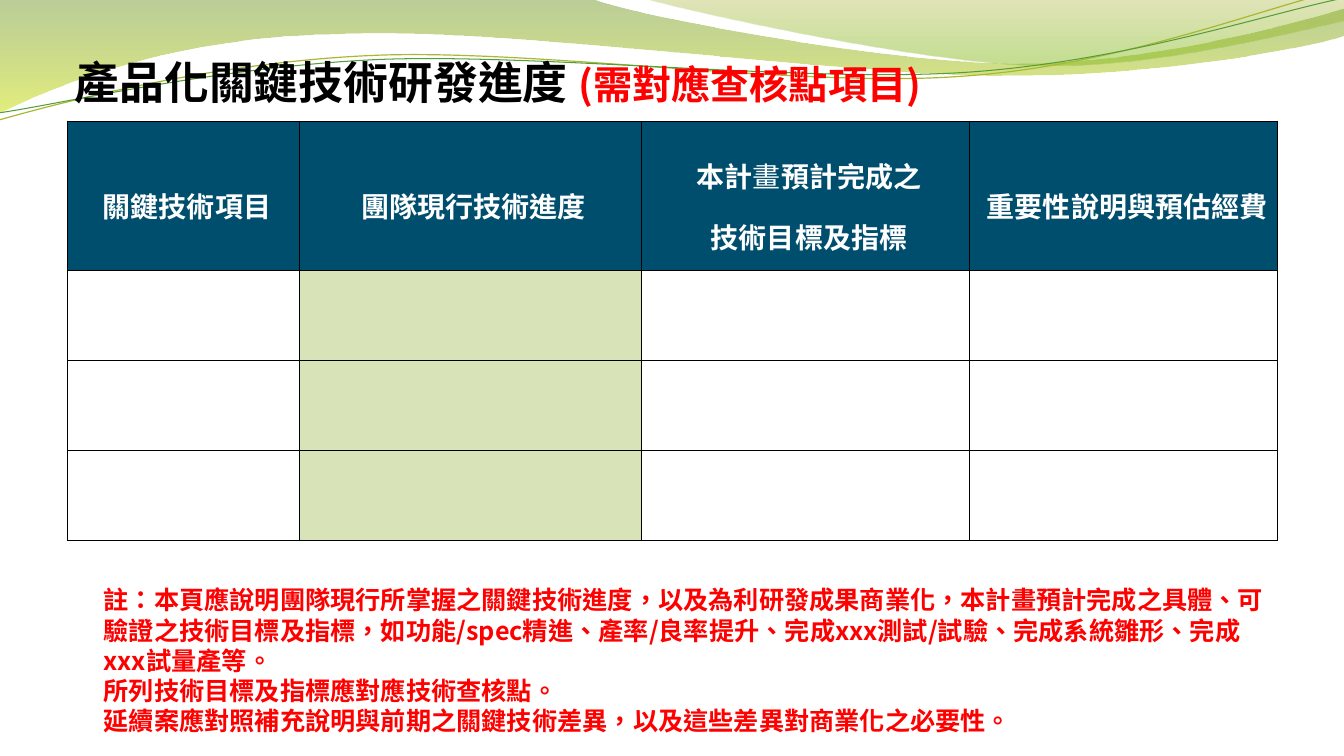
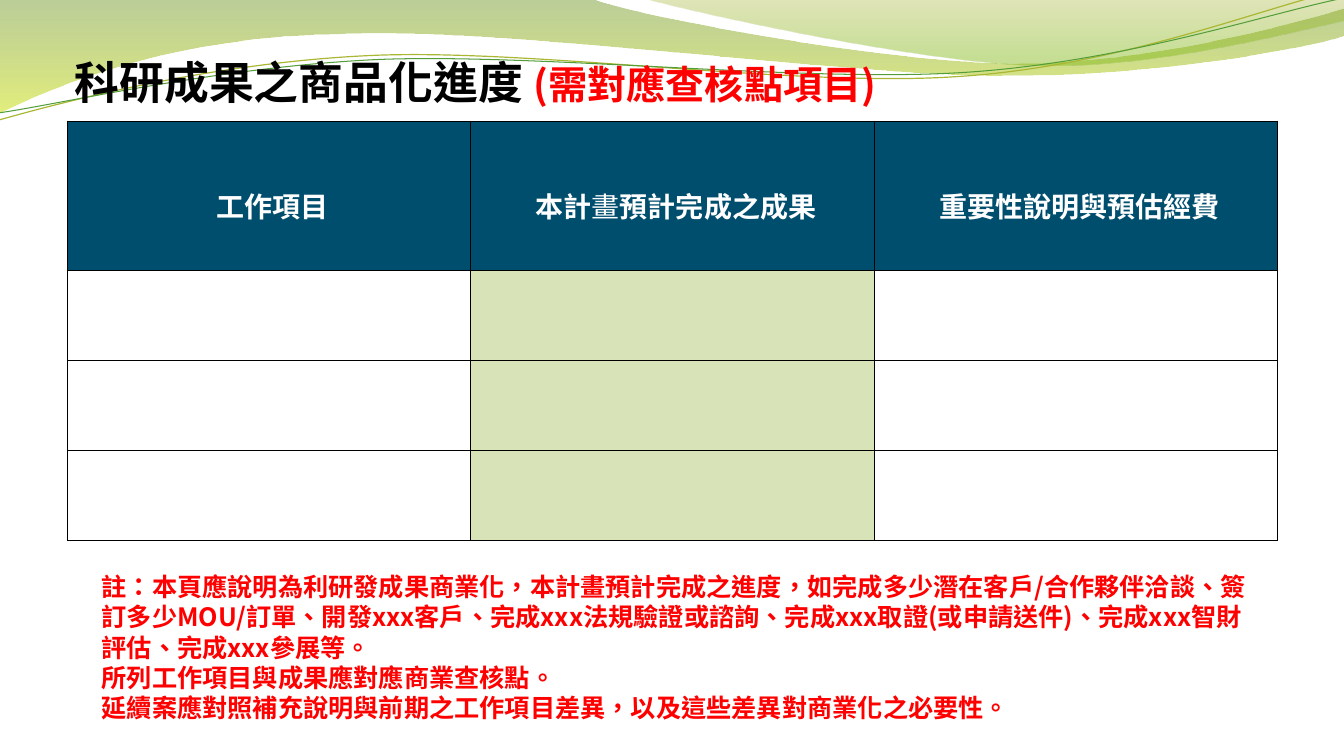
"""Build two research-progress slides with a shared wave header, table and note."""
from dataclasses import dataclass

from lxml.etree import SubElement
from pptx import Presentation
from pptx.dml.color import RGBColor
from pptx.enum.text import MSO_ANCHOR, MSO_AUTO_SIZE, PP_ALIGN
from pptx.oxml.ns import qn
from pptx.util import Inches, Pt


@dataclass(frozen=True)
class Theme:
    header: str = "004E6E"
    highlight: str = "D8E4B7"
    white: str = "FFFFFF"
    black: str = "000000"
    red: str = "FF0000"
    title_font: str = "Noto Sans CJK SC"
    body_font: str = "Noto Sans CJK TC"
    language: str = "zh-TW"
    title_size: int = 32
    suffix_size: int = 28
    header_size: int = 20
    note_size: int = 18
    border_width: float = 0.75


theme = Theme()


def set_format(target, values):
    for name, value in values.items():
        setattr(target, name, value)


def add_text(paragraph, text, font_name, size, color, bold=True):
    run = paragraph.add_run()
    run.text = text
    set_format(run.font, {"name": font_name, "size": Pt(size), "bold": bold})
    run.font.color.rgb = RGBColor.from_string(color)
    run.font._element.set("lang", theme.language)
    SubElement(run.font._element, qn("a:ea"), typeface=font_name)


TITLE_SUFFIX = "(需對應查核點項目)"
LIGHT_CHARACTER = "畫"
HIGHLIGHT_COLUMN = 1
TABLE_HEIGHT = 4.16
HEADER_HEIGHT = 1.48
BODY_ROWS = 3
ROW_HEIGHTS = [HEADER_HEIGHT] + [(TABLE_HEIGHT - HEADER_HEIGHT) / BODY_ROWS] * BODY_ROWS
TITLE_FRAME = {
    "margin_left": 0, "margin_top": Inches(0.05), "margin_right": 0, "margin_bottom": 0,
    "vertical_anchor": MSO_ANCHOR.MIDDLE, "auto_size": MSO_AUTO_SIZE.NONE, "word_wrap": True,
}
NOTE_FRAME = {"word_wrap": True, "auto_size": MSO_AUTO_SIZE.SHAPE_TO_FIT_TEXT}

WAVES = [
    {
        "start": (0, 0),
        "segments": [
            (5.87, -0.01),
            (6.34, 0.17, 8.84, 0.63, 10.11, 0.63),
            (11.37, 0.63, 12.77, 0.26, 13.33, 0.09),
            (13.34, 0.36),
            (13.11, 0.44, 11.59, 0.76, 9.94, 0.75),
            (8.29, 0.75, 5.09, 0.28, 3.43, 0.34),
            (1.72, 0.36, 0.61, 0.83, -0.02, 1.13),
            (0, 0),
        ],
        "stops": [(0, "69921C", 45), (1, "CCE10F", 55)],
    },
    {
        "start": (6.38, -0.01),
        "segments": [
            (6.79, 0.11, 9.09, 0.62, 10.25, 0.65),
            (11.4, 0.69, 12.82, 0.32, 13.33, 0.21),
            (13.33, 0),
            (6.38, -0.01),
        ],
        "stops": [(0, "9BAA1A", 30), (0.8, "81BA16", 45)],
    },
    {
        "start": (-0.01, 1.19),
        "segments": [
            (0.63, 1.01, 2.1, 0.62, 3.69, 0.55),
            (5.27, 0.48, 7.89, 0.87, 9.49, 0.76),
            (11.1, 0.66, 12.51, 0.08, 13.3, -0.1),
        ],
        "line": ("A9B733", 0.85),
    },
    {
        "start": (-0.01, 1.12),
        "segments": [
            (0.62, 1.03, 2.18, 0.66, 3.77, 0.59),
            (5.37, 0.53, 7.96, 0.82, 9.55, 0.72),
            (11.14, 0.62, 12.55, 0.14, 13.33, -0.02),
        ],
        "line": ("549E39", 0.75),
    },
]

SLIDES = [
    {
        "title": "產品化關鍵技術研發進度 ",
        "columns": [2.3, 3.39, 3.26, 3.05],
        "headers": [
            ["關鍵技術項目"],
            ["團隊現行技術進度"],
            ["本計畫預計完成之", "技術目標及指標"],
            ["重要性說明與預估經費"],
        ],
        "note_box": (0.93, 5.75, 11.82, 1.62),
        "note": [
            "註：本頁應說明團隊現行所掌握之關鍵技術進度，以及為利研發成果商業化，"
            "本計畫預計完成之具體、可驗證之技術目標及指標，如功能/spec精進、產率/良率提升、"
            "完成xxx測試/試驗、完成系統雛形、完成xxx試量產等。",
            "所列技術目標及指標應對應技術查核點。",
            "延續案應對照補充說明與前期之關鍵技術差異，以及這些差異對商業化之必要性。",
        ],
    },
    {
        "title": "科研成果之商品化進度 ",
        "columns": [4, 4, 4],
        "headers": [["工作項目"], ["本計畫預計完成之成果"], ["重要性說明與預估經費"]],
        "note_box": (0.91, 5.62, 11.56, 1.62),
        "note": [
            "註：本頁應說明為利研發成果商業化，本計畫預計完成之進度，"
            "如完成多少潛在客戶/合作夥伴洽談、簽訂多少MOU/訂單、開發xxx客戶、"
            "完成xxx法規驗證或諮詢、完成xxx取證(或申請送件)、完成xxx智財評估、完成xxx參展等。",
            "所列工作項目與成果應對應商業查核點。",
            "延續案應對照補充說明與前期之工作項目差異，以及這些差異對商業化之必要性。",
        ],
    },
]

presentation = Presentation()
set_format(presentation, {"slide_width": Inches(13.33), "slide_height": Inches(7.5)})
layout = presentation.slide_layouts[5]
for placeholder in list(layout.placeholders)[1:]:
    layout.shapes.element.remove(placeholder.element)
slides = [presentation.slides.add_slide(layout) for _ in SLIDES]

for position, wave in enumerate(WAVES):
    coordinates = [value for segment in wave["segments"] for value in segment]
    points = [(Inches(x), Inches(y)) for x, y in zip(coordinates[::2], coordinates[1::2])]
    builder = slides[0].shapes.build_freeform(*map(Inches, wave["start"]))
    builder.add_line_segments(points, close="stops" in wave)
    shape = builder.convert_to_shape()
    lines = shape.element.iter(qn("a:lnTo"))
    line_groups = [[next(lines) for _ in range(len(segment) // 2)] for segment in wave["segments"]]
    for group in line_groups:
        if len(group) == 3:
            curve = group[0]
            for line in group[1:]:
                curve.append(line[0])
                line.getparent().remove(line)
            curve.tag = qn("a:cubicBezTo")
    shape.shadow.inherit = False
    if "stops" in wave:
        shape.line.fill.background()
        shape.fill.gradient()
        shape.fill.gradient_angle = 270
        for stop, (offset, color, _) in zip(shape.fill.gradient_stops, wave["stops"]):
            stop.position = offset
            stop.color.rgb = RGBColor.from_string(color)
        for color_element, (_, _, opacity) in zip(shape.element.iter(qn("a:srgbClr")), wave["stops"]):
            SubElement(color_element, qn("a:alpha"), val=str(opacity * 1000))
    else:
        color, width = wave["line"]
        shape.fill.background()
        shape.line.color.rgb = RGBColor.from_string(color)
        shape.line.width = Pt(width)
    layout.shapes.element.insert(2 + position, shape.element)

for slide, content in zip(slides, SLIDES):
    title = slide.shapes.title
    set_format(title, {"left": Inches(0.67), "top": Inches(0.36), "width": Inches(12), "height": Inches(0.58)})
    set_format(title.text_frame, TITLE_FRAME)
    paragraph = title.text_frame.paragraphs[0]
    set_format(paragraph, {"alignment": PP_ALIGN.LEFT, "line_spacing": 1.5})
    paragraph._p.get_or_add_pPr().set("marL", str(Inches(0.07)))
    add_text(paragraph, content["title"], theme.title_font, theme.title_size, theme.black)
    add_text(paragraph, TITLE_SUFFIX, theme.title_font, theme.suffix_size, theme.red)

    table = slide.shapes.add_table(
        len(ROW_HEIGHTS), len(content["columns"]),
        Inches(0.67), Inches(1.2), Inches(12), Inches(TABLE_HEIGHT),
    ).table
    set_format(table, {"first_row": False, "horz_banding": False})
    for column, width in zip(table.columns, content["columns"]):
        column.width = Inches(width)
    for row_index, height in enumerate(ROW_HEIGHTS):
        table.rows[row_index].height = Inches(height)
        for column_index, lines in enumerate(content["headers"]):
            cell = table.cell(row_index, column_index)
            properties = cell._tc.get_or_add_tcPr()
            for side in ("a:lnL", "a:lnR", "a:lnT", "a:lnB"):
                border = SubElement(properties, qn(side), w=str(Pt(theme.border_width)))
                SubElement(SubElement(border, qn("a:solidFill")), qn("a:srgbClr"), val=theme.black)
            body_color = theme.highlight if column_index == HIGHLIGHT_COLUMN else theme.white
            cell.fill.solid()
            cell.fill.fore_color.rgb = RGBColor.from_string(body_color if row_index else theme.header)
            if row_index:
                continue
            side_margin = Inches(0.05) if column_index == HIGHLIGHT_COLUMN else 0
            set_format(cell, {
                "margin_left": side_margin, "margin_right": side_margin,
                "margin_top": 0, "margin_bottom": 0, "vertical_anchor": MSO_ANCHOR.MIDDLE,
            })
            cell.text = "\n".join(lines)
            for paragraph, line in zip(cell.text_frame.paragraphs, lines):
                paragraph.clear()
                set_format(paragraph, {"alignment": PP_ALIGN.CENTER, "line_spacing": 1.5})
                paragraph._p.get_or_add_pPr().set("marL", str(Inches(0.07)))
                for text in filter(None, line.partition(LIGHT_CHARACTER)):
                    add_text(paragraph, text, theme.body_font, theme.header_size, theme.white,
                             bold=text != LIGHT_CHARACTER)

    note_frame = slide.shapes.add_textbox(*map(Inches, content["note_box"])).text_frame
    set_format(note_frame, NOTE_FRAME)
    for index, text in enumerate(content["note"]):
        paragraph = note_frame.add_paragraph() if index else note_frame.paragraphs[0]
        add_text(paragraph, text, theme.body_font, theme.note_size, theme.red)

presentation.save("out.pptx")
